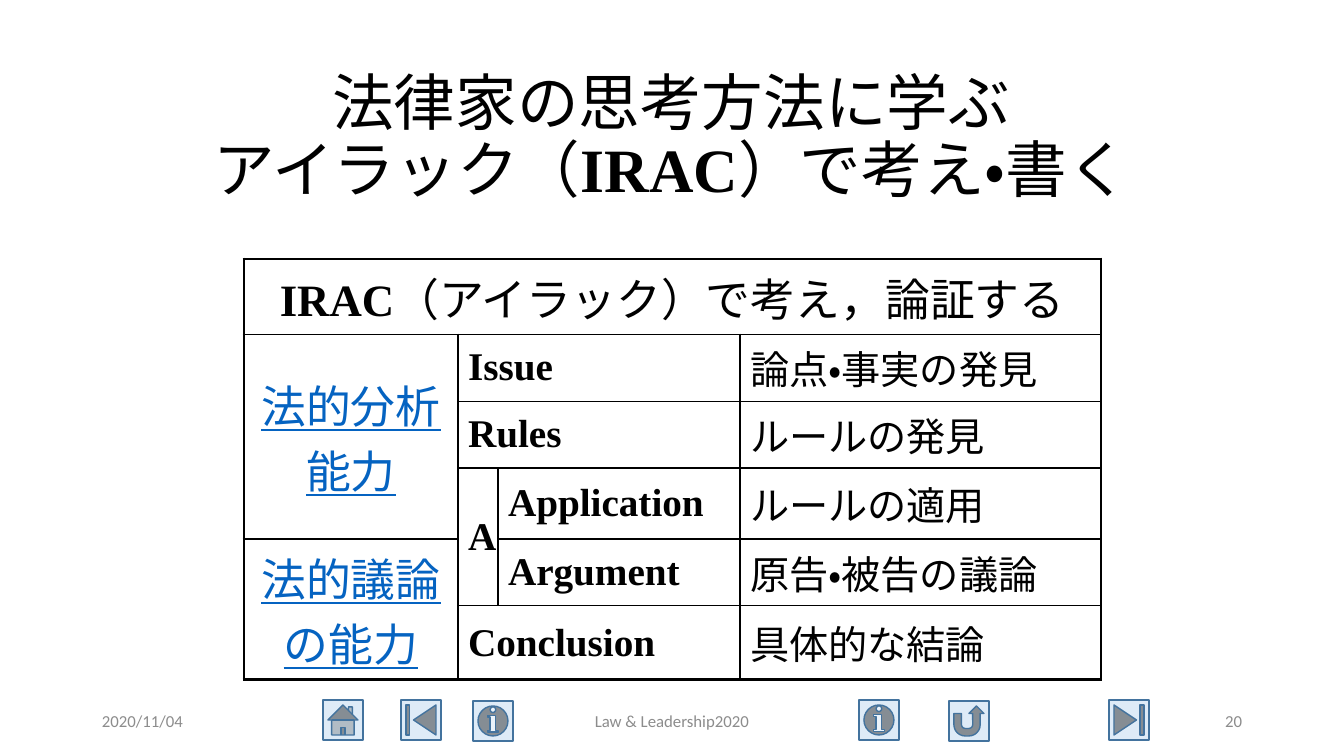
from dataclasses import dataclass
from itertools import groupby

from lxml.etree import SubElement
from pptx import Presentation
from pptx.dml.color import RGBColor
from pptx.enum.lang import MSO_LANGUAGE_ID as Language
from pptx.enum.shapes import MSO_SHAPE as Preset
from pptx.enum.text import MSO_ANCHOR as Anchor, MSO_AUTO_SIZE as AutoSize, PP_ALIGN as Align
from pptx.oxml.ns import qn
from pptx.slide import Slide
from pptx.table import Table, _Cell as Cell
from pptx.text.text import Font, _Paragraph as Paragraph
from pptx.util import Emu, Pt


@dataclass(frozen=True)
class Theme:
    text: str = "000000"
    link: str = "0563C1"
    footer: str = "8C8C8C"
    button: str = "DEEBF7"
    button_line: str = "43739E"
    paper: str = "FFFFFF"
    latin_font: str = "Times New Roman"
    body_font: str = "Calibri"
    table_font: str = "Lato"
    title_size: int = 44
    heading_size: int = 32
    cell_size: int = 28
    footer_size: int = 12
    thin: float = 1
    thick: float = 2.25


@dataclass(frozen=True)
class Button:
    preset: Preset
    left: int
    top: int


@dataclass(frozen=True)
class Footer:
    text: str
    left: int
    width: int
    align: Align


@dataclass(frozen=True)
class Entry:
    text: str
    row: int
    column: int
    rows: int = 1
    columns: int = 1
    heading: bool = False
    link: bool = False
    centred: bool = False


THEME = Theme()
BUTTON_SIDE = 40
NO_STYLE = "{2D5ABB26-0587-4C30-8999-92F81FD0307C}"
TITLE_LINES = ["法律家の思考方法に学ぶ", "アイラック（IRAC）で考え・書く"]
COLUMN_WIDTHS = [214, 40, 242, 361]
ROW_HEIGHTS = [75, 67, 67, 71, 66, 74]

BUTTONS = [
    Button(Preset.ACTION_BUTTON_HOME, 323, 700),
    Button(Preset.ACTION_BUTTON_BEGINNING, 401, 700),
    Button(Preset.ACTION_BUTTON_END, 1109, 700),
    Button(Preset.ACTION_BUTTON_INFORMATION, 859, 700),
    Button(Preset.ACTION_BUTTON_RETURN, 949, 701),
    Button(Preset.ACTION_BUTTON_INFORMATION, 473, 701),
]
FOOTERS = [
    Footer("2020/11/04", 92, 302, Align.LEFT),
    Footer("Law & Leadership2020", 445, 454, Align.CENTER),
    Footer("20", 950, 302, Align.RIGHT),
]
ENTRIES = [
    Entry("IRAC（アイラック）で考え，論証する", 0, 0, columns=4, heading=True, centred=True),
    Entry("法的分析能力", 1, 0, rows=3, heading=True, link=True, centred=True),
    Entry("Issue", 1, 1, columns=2),
    Entry("論点・事実の発見", 1, 3),
    Entry("Rules", 2, 1, columns=2),
    Entry("ルールの発見", 2, 3),
    Entry("A", 3, 1, rows=2, centred=True),
    Entry("Application", 3, 2),
    Entry("ルールの適用", 3, 3),
    Entry("法的議論の能力", 4, 0, rows=2, heading=True, link=True, centred=True),
    Entry("Argument", 4, 2),
    Entry("原告・被告の議論", 4, 3),
    Entry("Conclusion", 5, 1, columns=2),
    Entry("具体的な結論", 5, 3),
]


def px(length: int) -> Emu:
    return Emu(round(length * 914400 / 100.8))


def style_font(font: Font, name: str, size: int, color: str, bold: bool = False) -> None:
    font.name = name
    font.size = Pt(size)
    font.bold = bold
    font.color.rgb = RGBColor.from_string(color)


def write_mixed(paragraph: Paragraph, text: str, font_name: str, size: int,
                color: str, underline: bool = False) -> None:
    for is_latin, letters in groupby(text, key=str.isascii):
        run = paragraph.add_run()
        run.text = "".join(letters)
        style_font(run.font, THEME.latin_font if is_latin else font_name, size, color, is_latin)
        run.font.underline = underline
        run.font.language_id = Language.ENGLISH_US if is_latin else Language.JAPANESE


def add_title(slide: Slide) -> None:
    title = slide.shapes.title
    title.left, title.top, title.width, title.height = px(92), px(66), px(1159), px(146)
    frame = title.text_frame
    frame.auto_size = AutoSize.NONE
    frame.vertical_anchor = Anchor.MIDDLE
    paragraph = frame.paragraphs[0]
    paragraph.alignment = Align.CENTER
    paragraph.line_spacing = 0.9
    for index, line in enumerate(TITLE_LINES):
        if index:
            paragraph.add_line_break()
        write_mixed(paragraph, line, THEME.body_font, THEME.title_size, THEME.text)


def add_button(slide: Slide, button: Button) -> None:
    shape = slide.shapes.add_shape(
        button.preset, px(button.left), px(button.top), px(BUTTON_SIDE), px(BUTTON_SIDE))
    shape.shadow.inherit = False
    shape.fill.solid()
    shape.fill.fore_color.rgb = RGBColor.from_string(THEME.button)
    shape.line.color.rgb = RGBColor.from_string(THEME.button_line)
    shape.line.width = Pt(1)


def add_footer(slide: Slide, footer: Footer) -> None:
    box = slide.shapes.add_textbox(px(footer.left), px(701), px(footer.width), px(40))
    frame = box.text_frame
    frame.word_wrap = True
    frame.vertical_anchor = Anchor.MIDDLE
    frame.text = footer.text
    paragraph = frame.paragraphs[0]
    paragraph.alignment = footer.align
    style_font(paragraph.runs[0].font, THEME.body_font, THEME.footer_size, THEME.footer)


def set_borders(cell: Cell, entry: Entry) -> None:
    outer_edges = {
        "a:lnL": entry.column == 0,
        "a:lnR": entry.column + entry.columns == len(COLUMN_WIDTHS),
        "a:lnT": entry.row == 0,
        "a:lnB": entry.row + entry.rows == len(ROW_HEIGHTS),
    }
    properties = cell._tc.get_or_add_tcPr()
    for tag, is_outer in outer_edges.items():
        width = Pt(THEME.thick if is_outer else THEME.thin)
        line = SubElement(properties, qn(tag), w=str(width))
        fill = SubElement(line, qn("a:solidFill"))
        SubElement(fill, qn("a:srgbClr"), val=THEME.text)


def fill_entry(table: Table, entry: Entry) -> None:
    cell = table.cell(entry.row, entry.column)
    if entry.rows * entry.columns > 1:
        cell.merge(table.cell(entry.row + entry.rows - 1, entry.column + entry.columns - 1))
    set_borders(cell, entry)
    cell.vertical_anchor = Anchor.MIDDLE
    paragraph = cell.text_frame.paragraphs[0]
    paragraph.alignment = Align.CENTER if entry.centred else Align.LEFT
    size = THEME.heading_size if entry.heading else THEME.cell_size
    color = THEME.link if entry.link else THEME.text
    write_mixed(paragraph, entry.text, THEME.table_font, size, color, entry.link)


def add_irac_table(slide: Slide) -> None:
    table = slide.shapes.add_table(
        len(ROW_HEIGHTS), len(COLUMN_WIDTHS), px(244), px(259),
        px(sum(COLUMN_WIDTHS)), px(sum(ROW_HEIGHTS))).table
    table.first_row = table.horz_banding = False
    table._tbl.tblPr.find(qn("a:tableStyleId")).text = NO_STYLE
    for column, width in zip(table.columns, COLUMN_WIDTHS):
        column.width = px(width)
    for row, height in zip(table.rows, ROW_HEIGHTS):
        row.height = px(height)
    for entry in ENTRIES:
        fill_entry(table, entry)
    for cell in table.iter_cells():
        cell.fill.solid()
        cell.fill.fore_color.rgb = RGBColor.from_string(THEME.paper)


def main() -> None:
    presentation = Presentation()
    presentation.slide_width, presentation.slide_height = px(1344), px(756)
    slide = presentation.slides.add_slide(presentation.slide_layouts.get_by_name("Title Only"))
    for button in BUTTONS:
        add_button(slide, button)
    add_title(slide)
    add_irac_table(slide)
    for footer in FOOTERS:
        add_footer(slide, footer)
    presentation.save("out.pptx")


if __name__ == "__main__":
    main()
